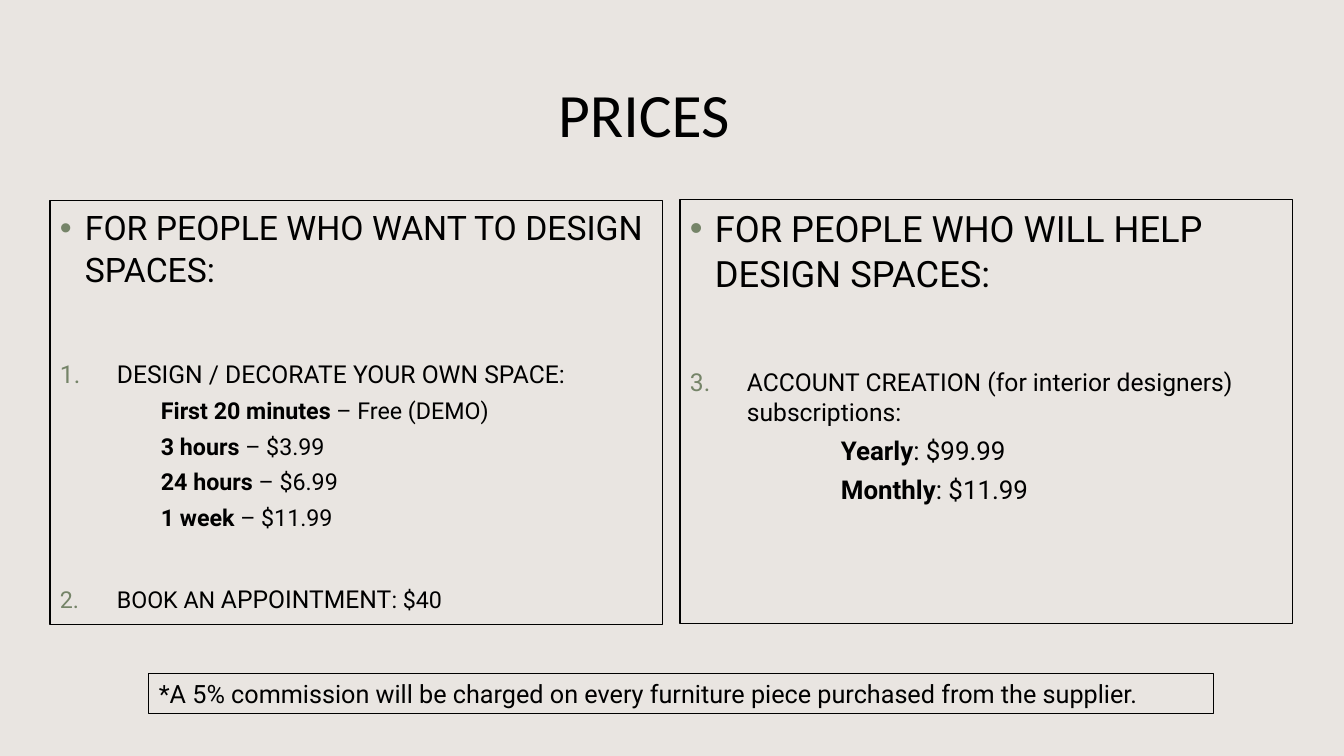
import pptx
import pptx.dml.color
import pptx.enum.text
import pptx.oxml.ns
import pptx.util
from lxml import etree

SCALE = 914400 / 100.8
BLACK = pptx.dml.color.RGBColor(0x00, 0x00, 0x00)
PAPER = pptx.dml.color.RGBColor(0xE9, 0xE5, 0xE1)
GREEN = pptx.dml.color.RGBColor(0x75, 0x84, 0x68)

DESIGN_PRICES = [
    ("First 20 minutes ", "– Free (DEMO)"),
    ("3 hours ", "– $3.99"),
    ("24 hours ", "– $6.99"),
    ("1 week ", "– $11.99"),
]
SUBSCRIPTION_PRICES = [("Yearly", ": $99.99"), ("Monthly", ": $11.99")]


def px(length):
    """Turn pixels into EMU."""
    return pptx.util.Emu(round(length * SCALE))


def style(span, size, bold=False, font="Roboto"):
    """Format one run."""
    span.font.name = font
    span.font.size = pptx.util.Pt(size)
    span.font.bold = bold
    span.font.color.rgb = BLACK


def indent(para, left, hanging=0):
    """Set the left margin and the hanging indent of a paragraph."""
    properties = para._p.get_or_add_pPr()
    properties.set("marL", str(px(left)))
    properties.set("indent", str(-px(hanging)))


def add_marker(para, kind, **attributes):
    """Give a paragraph a green bullet or number."""
    properties = para._p.get_or_add_pPr()
    colour = etree.SubElement(properties, pptx.oxml.ns.qn("a:buClr"))
    etree.SubElement(colour, pptx.oxml.ns.qn("a:srgbClr"), val=str(GREEN))
    if kind == "buChar":
        etree.SubElement(properties, pptx.oxml.ns.qn("a:buFont"), typeface="Arial")
    etree.SubElement(properties, pptx.oxml.ns.qn("a:" + kind), **attributes)


def add_framed_box(page, left, top, width, height):
    """Add a wrapping text box with a thin black frame."""
    box = page.shapes.add_textbox(px(left), px(top), px(width), px(height))
    box.line.color.rgb = BLACK
    box.line.width = pptx.util.Pt(0.75)
    box.text_frame.word_wrap = True
    return box


def add_spans(para, spans, before=0):
    """Fill a paragraph with (text, size, bold) runs."""
    para.line_spacing = 1.03
    para.space_before = pptx.util.Pt(before)
    for text, size, bold in spans:
        span = para.add_run()
        span.text = text
        style(span, size, bold)


def add_heading(frame, text, size):
    """Write the bulleted heading of a price panel."""
    para = frame.paragraphs[0]
    indent(para, 25, 25)
    add_marker(para, "buChar", char="•")
    add_spans(para, [(text, size, False)])


def add_item(frame, spans, before, **numbering):
    """Write a numbered offer."""
    para = frame.add_paragraph()
    indent(para, 57, 57)
    add_marker(para, "buAutoNum", type="arabicPeriod", **numbering)
    add_spans(para, spans, before)


def add_prices(frame, prices, size, left, level):
    """Write indented lines with a bold term and its price."""
    for term, price in prices:
        para = frame.add_paragraph()
        para.level = level
        indent(para, left)
        add_spans(para, [(term, size, True), (price, size, False)], 5)


def add_title(page, left, top, width, height):
    """Place and format the slide title."""
    title = page.shapes.title
    title.left, title.top = px(left), px(top)
    title.width, title.height = px(width), px(height)
    frame = title.text_frame
    frame.text = "PRICES "
    frame.vertical_anchor = pptx.enum.text.MSO_ANCHOR.MIDDLE
    frame.paragraphs[0].alignment = pptx.enum.text.PP_ALIGN.CENTER
    style(frame.paragraphs[0].runs[0], 44, font="Calibri")


def add_customer_panel(page, left, top, width, height):
    """Add the prices for people who design their own space."""
    frame = add_framed_box(page, left, top, width, height).text_frame
    add_heading(frame, "FOR PEOPLE WHO WANT TO DESIGN SPACES:", 24.1)
    add_item(frame, [("DESIGN / DECORATE YOUR OWN SPACE:", 17.6, False)], 49)
    add_prices(frame, DESIGN_PRICES, 16.6, 101, 1)
    booking = [("BOOK AN ", 16.6, False), ("APPOINTMENT", 17.6, False), (": $40", 16.6, False)]
    add_item(frame, booking, 37)


def add_designer_panel(page, left, top, width, height):
    """Add the subscription prices for interior designers."""
    frame = add_framed_box(page, left, top, width, height).text_frame
    add_heading(frame, "FOR PEOPLE WHO WILL HELP DESIGN SPACES:", 25.9)
    offer = "ACCOUNT CREATION (for interior designers) subscriptions:"
    add_item(frame, [(offer, 17.6, False)], 51, startAt="3")
    add_prices(frame, SUBSCRIPTION_PRICES, 18.5, 151, 2)


def add_footnote(page, left, top, width, height):
    """Add the framed note on commission."""
    frame = add_framed_box(page, left, top, width, height).text_frame
    frame.auto_size = pptx.enum.text.MSO_AUTO_SIZE.SHAPE_TO_FIT_TEXT
    frame.text = "*A 5% commission will be charged on every furniture piece purchased from the supplier."
    style(frame.paragraphs[0].runs[0], 18)


def main():
    """Build the price slide and save it."""
    deck = pptx.Presentation()
    deck.slide_width, deck.slide_height = px(1344), px(756)
    page = deck.slides.add_slide(deck.slide_layouts.get_by_name("Title Only"))
    page.background.fill.solid()
    page.background.fill.fore_color.rgb = PAPER
    add_title(page, 50, 40, 1202, 146)
    add_customer_panel(page, 50, 201, 613, 424)
    add_designer_panel(page, 680, 200, 613, 424)
    add_footnote(page, 149, 673, 1065, 41)
    deck.save("out.pptx")


if __name__ == "__main__":
    main()
